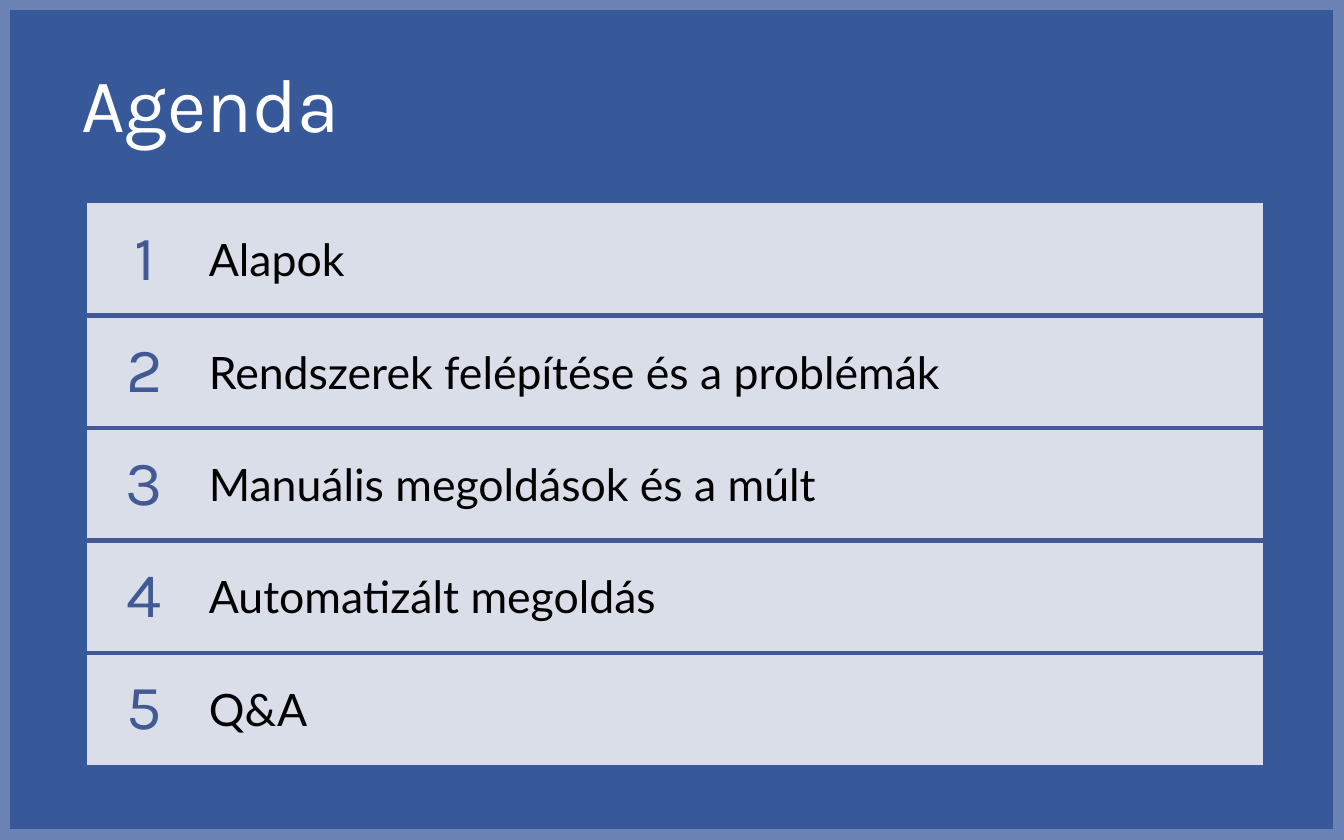
from lxml.etree import SubElement
from pptx import Presentation
from pptx.dml.color import RGBColor
from pptx.enum.shapes import MSO_SHAPE as Shape
from pptx.enum.text import MSO_ANCHOR as Anchor, PP_ALIGN as Align
from pptx.oxml.ns import qn
from pptx.util import Inches, Pt

WIDTH, HEIGHT = 14.22, 8.89
COLORS = {
    "page": "375999",
    "frame": "6B84B5",
    "accent": "415995",
    "row": "D9DEE9",
    "title": "FFFFFF",
    "topic": "000000",
}
FORMATS = {
    "title": {"name": "Karla", "size": Pt(58)},
    "accent": {"name": "Karla", "size": Pt(48)},
    "topic": {"name": "Lato", "size": Pt(34)},
}
TOPICS = [
    "Alapok",
    "Rendszerek felépítése és a problémák",
    "Manuális megoldások és a múlt",
    "Automatizált megoldás",
    "Q&A",
]


def color(name):
    return RGBColor.from_string(COLORS[name])


def set_margins(target, size):
    for side in ("left", "top", "right", "bottom"):
        setattr(target, f"margin_{side}", Inches(size))


class AgendaPage:
    def __init__(self, deck):
        self.page = deck.slides.add_slide(deck.slide_layouts[6])

    def add_text(self, para, text, style):
        span = para.add_run()
        span.text = text
        for key, value in FORMATS[style].items():
            setattr(span.font, key, value)
        span.font.color.rgb = color(style)

    def background(self):
        panel = self.page.shapes.add_shape(
            Shape.RECTANGLE, 0, 0, Inches(WIDTH), Inches(HEIGHT))
        panel.shadow.inherit = False
        panel.fill.solid()
        panel.fill.fore_color.rgb = color("page")
        panel.line.color.rgb = color("frame")
        panel.line.width = Pt(16)

    def title(self, text):
        box = self.page.shapes.add_textbox(
            Inches(0.86), Inches(0.71), Inches(12.49), Inches(0.72))
        box.text_frame.word_wrap = True
        set_margins(box.text_frame, 0)
        para = box.text_frame.paragraphs[0]
        para.line_spacing = 0.9
        self.add_text(para, text, "title")

    def border(self, cell, edge):
        """Set one edge (lnL, lnR, lnT or lnB); no line unless it divides rows."""
        name, visible = edge
        line = SubElement(cell._tc.get_or_add_tcPr(), qn(f"a:{name}"), w=str(Pt(4)))
        if visible:
            fill = SubElement(line, qn("a:solidFill"))
            SubElement(fill, qn("a:srgbClr"), val=COLORS["accent"])
        else:
            SubElement(line, qn("a:noFill"))

    def cell(self, cell, text, style, align, edges):
        for edge in edges:
            self.border(cell, edge)
        cell.fill.solid()
        cell.fill.fore_color.rgb = color("row")
        cell.vertical_anchor = Anchor.MIDDLE
        set_margins(cell, 0.07)
        para = cell.text_frame.paragraphs[0]
        para.alignment = align
        para._p.get_or_add_pPr().set("marL", str(Inches(0.03)))
        self.add_text(para, text, style)

    def agenda(self, topics):
        widths, row_height = (1.19, 11.25), 1.19
        table = self.page.shapes.add_table(
            len(topics), len(widths), Inches(0.92), Inches(2.15),
            Inches(sum(widths)), Inches(row_height * len(topics))).table
        table.first_row = table.horz_banding = False
        for column, width in zip(table.columns, widths):
            column.width = Inches(width)
        for index, topic in enumerate(topics):
            table.rows[index].height = Inches(row_height)
            edges = [("lnL", False), ("lnR", False),
                     ("lnT", index > 0), ("lnB", index < len(topics) - 1)]
            self.cell(table.cell(index, 0), str(index + 1), "accent",
                      Align.CENTER, edges)
            self.cell(table.cell(index, 1), topic, "topic", Align.LEFT, edges)


def main():
    deck = Presentation()
    deck.slide_width, deck.slide_height = Inches(WIDTH), Inches(HEIGHT)
    page = AgendaPage(deck)
    page.background()
    page.agenda(TOPICS)
    page.title("Agenda")
    deck.save("out.pptx")


if __name__ == "__main__":
    main()
